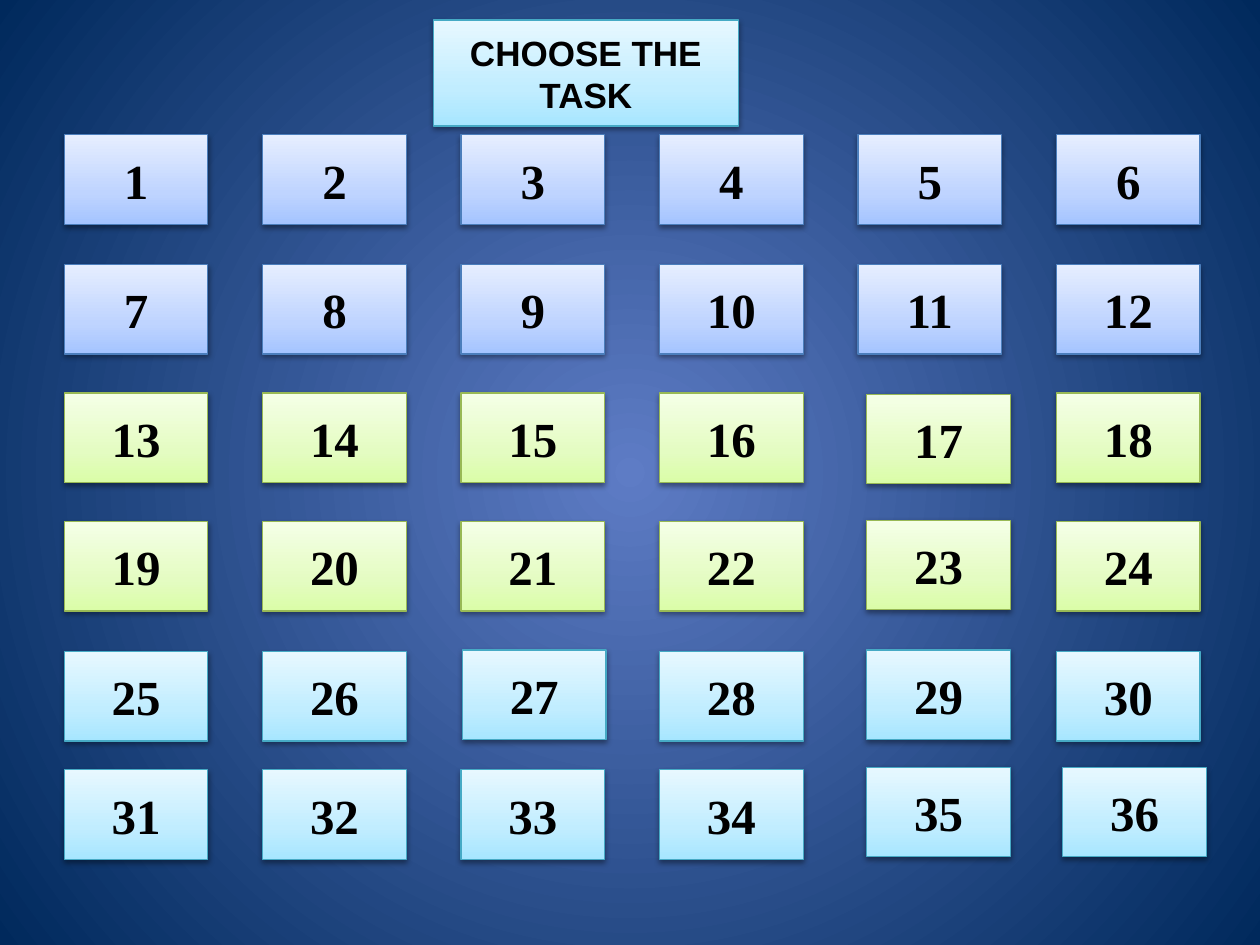
import copy
import pptx
import pptx.util
import pptx.dml.color
import pptx.enum.shapes
import pptx.enum.text
import pptx.oxml
import pptx.oxml.ns

Inches = pptx.util.Inches
Pt = pptx.util.Pt
RGBColor = pptx.dml.color.RGBColor

BLACK = RGBColor(0x00, 0x00, 0x00)
GLOW = RGBColor(0x5E, 0x7C, 0xC5)
NAVY = RGBColor(0x00, 0x29, 0x5C)
BLUE = {
    "stops": [(0, RGBColor(0xA4, 0xC4, 0xFF)), (0.35, RGBColor(0xBF, 0xD4, 0xFF)), (1, RGBColor(0xE6, 0xEE, 0xFF))],
    "edge": RGBColor(0x4B, 0x7E, 0xBC),
}
GREEN = {
    "stops": [(0, RGBColor(0xDA, 0xFD, 0xA7)), (0.35, RGBColor(0xE4, 0xFC, 0xC2)), (1, RGBColor(0xF5, 0xFF, 0xE7))],
    "edge": RGBColor(0x98, 0xB9, 0x55),
}
AQUA = {
    "stops": [(0, RGBColor(0xA7, 0xE6, 0xFF)), (0.35, RGBColor(0xC1, 0xED, 0xFF)), (1, RGBColor(0xE7, 0xF8, 0xFF))],
    "edge": RGBColor(0x46, 0xAA, 0xC5),
}

TITLE = "CHOOSE THE TASK"
ROWS = [(1.07, BLUE), (2.1, BLUE), (3.12, GREEN), (4.14, GREEN), (5.17, AQUA), (6.11, AQUA)]
COLS = 6
LEFT, STEP = 0.51, 1.575
WIDTH, HEIGHT = 1.14, 0.71
SHIFTS = {
    17: (0.07, 0.01),
    23: (0.07, -0.01),
    27: (0.01, -0.01),
    29: (0.07, -0.01),
    35: (0.07, -0.02),
    36: (0.05, -0.02),
}

NS = pptx.oxml.ns.nsdecls("a")
SHADOW = (
    f'<a:outerShdw {NS} blurRad="40000" dist="20000" dir="5400000" rotWithShape="0">'
    '<a:srgbClr val="000000"><a:alpha val="38000"/></a:srgbClr></a:outerShdw>'
)
RADIAL = (
    f'<a:path {NS} path="circle">'
    '<a:fillToRect l="50000" t="50000" r="50000" b="50000"/></a:path>'
)


def blend(fill, root, stops):
    fill.gradient()
    group = root.xpath(".//a:gsLst")[0]
    while len(group) < len(stops):
        group.append(copy.deepcopy(group[0]))
    for stop, (place, color) in zip(fill.gradient_stops, stops):
        stop.position = place
        stop.color.rgb = color


def paint(shape, theme):
    blend(shape.fill, shape._element, theme["stops"])
    shape.fill.gradient_angle = 90
    shape.line.color.rgb = theme["edge"]
    shape.line.width = Pt(0.75)
    shape.shadow.inherit = False
    shape._element.xpath(".//a:effectLst")[0].append(pptx.oxml.parse_xml(SHADOW))


def write(shape, text, size=28, font="Times New Roman", wrap=False):
    frame = shape.text_frame
    frame.word_wrap = wrap
    frame.auto_size = pptx.enum.text.MSO_AUTO_SIZE.NONE
    frame.vertical_anchor = pptx.enum.text.MSO_ANCHOR.MIDDLE
    para = frame.paragraphs[0]
    para.alignment = pptx.enum.text.PP_ALIGN.CENTER
    run = para.add_run()
    run.text = text
    run.font.name = font
    run.font.size = Pt(size)
    run.font.bold = True
    run.font.color.rgb = BLACK


def main():
    deck = pptx.Presentation()
    deck.slide_width, deck.slide_height = Inches(10), Inches(7.5)
    slide = deck.slides.add_slide(deck.slide_layouts[5])

    blend(slide.background.fill, slide._element, [(0, GLOW), (1, NAVY)])
    line = slide._element.xpath(".//p:bgPr//a:lin")[0]
    line.getparent().replace(line, pptx.oxml.parse_xml(RADIAL))

    title = slide.shapes.title
    title.left, title.top = Inches(3.44), Inches(0.16)
    title.width, title.height = Inches(2.42), Inches(0.84)
    paint(title, AQUA)
    write(title, TITLE, size=20, font="Arial", wrap=True)

    for row, (top, theme) in enumerate(ROWS):
        for col in range(COLS):
            task = row * COLS + col + 1
            right, down = SHIFTS.get(task, (0, 0))
            button = slide.shapes.add_shape(
                pptx.enum.shapes.MSO_SHAPE.ACTION_BUTTON_CUSTOM,
                Inches(LEFT + col * STEP + right),
                Inches(top + down),
                Inches(WIDTH),
                Inches(HEIGHT),
            )
            paint(button, theme)
            write(button, str(task))

    deck.save("out.pptx")


if __name__ == "__main__":
    main()
